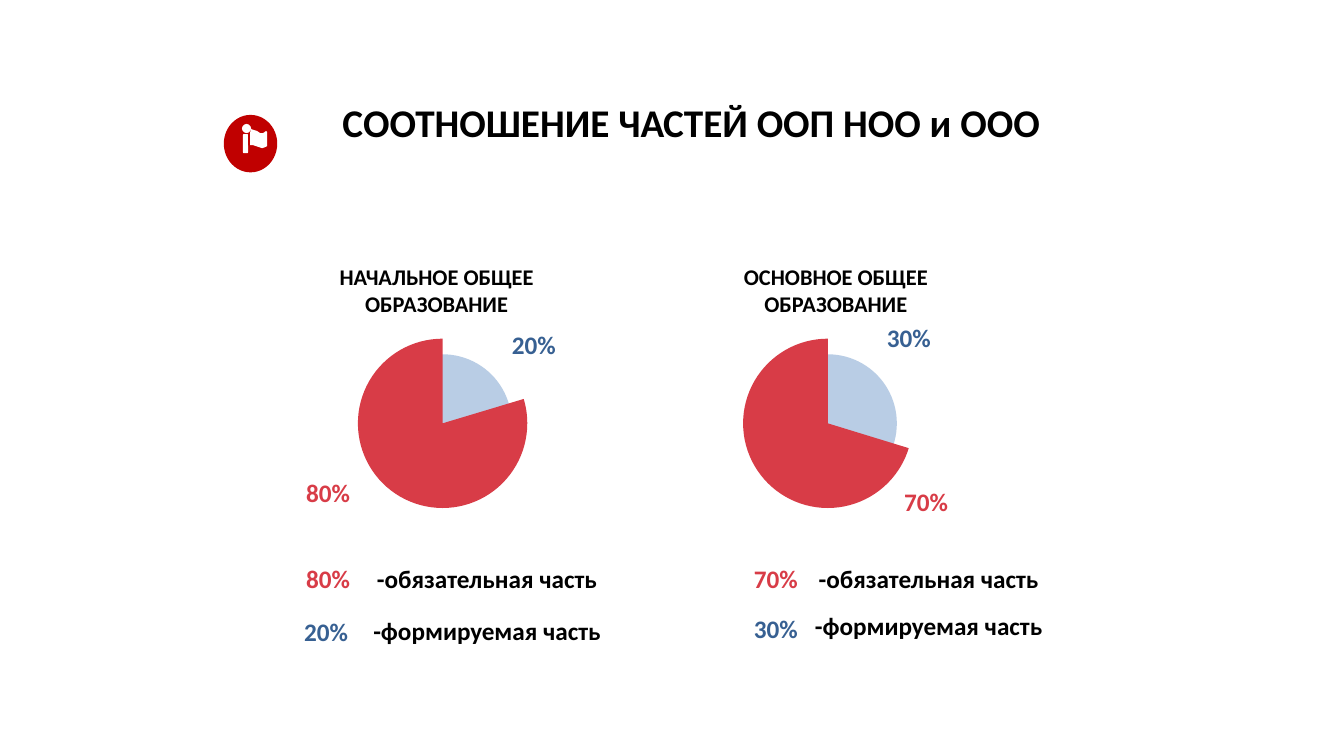
from pptx import Presentation
from pptx.dml.color import RGBColor
from pptx.enum.shapes import MSO_SHAPE as SHAPE
from pptx.enum.text import MSO_ANCHOR as ANCHOR, PP_ALIGN as ALIGN
from pptx.util import Inches, Pt

BLACK, WHITE, RED, BLUE, PALE, BADGE = "000000", "FFFFFF", "D83C47", "376092", "B9CDE5", "C00000"
TITLE = "СООТНОШЕНИЕ ЧАСТЕЙ ООП НОО и ООО"
PARTS = [("-обязательная часть", RED), ("-формируемая часть", BLUE)]
LEVELS = [
    dict(head="НАЧАЛЬНОЕ ОБЩЕЕ ОБРАЗОВАНИЕ", head_x=2.75, pie_x=3.55, start=343.27,
         shares=["80%", "20%"], labels=[(2.89, 4.68), (4.93, 3.21)],
         keys=[(2.89, 5.53), (2.87, 6.06)], part_x=3.55, part_y=[5.59, 6.1]),
    dict(head="ОСНОВНОЕ ОБЩЕЕ ОБРАЗОВАНИЕ", head_x=6.71, pie_x=7.37, start=17.06,
         shares=["70%", "30%"], labels=[(8.82, 4.77), (8.65, 3.14)],
         keys=[(7.33, 5.53), (7.33, 6.03)], part_x=7.93, part_y=[5.59, 6.06]),
]
PIE_Y, PIE_SIZE, INNER = 3.36, 1.68, 1.37
FLAG = [(2.49, 1.28), (2.52, 1.29), (2.55, 1.3), (2.58, 1.32), (2.61, 1.32), (2.64, 1.3),
        (2.65, 1.31), (2.65, 1.45), (2.63, 1.46), (2.6, 1.47), (2.57, 1.46), (2.54, 1.45),
        (2.51, 1.44), (2.48, 1.44), (2.48, 1.32)]


def paint(sp, color):
    sp.fill.solid()
    sp.fill.fore_color.rgb = RGBColor.from_string(color)
    sp.line.fill.background()
    sp.shadow.inherit = False


def add_shape(s, kind, color, *box):
    sp = s.shapes.add_shape(kind, *map(Inches, box))
    paint(sp, color)
    return sp


def add_text(s, text, box, size=18, color=BLACK, left=0.1, anchor=ANCHOR.MIDDLE):
    tf = s.shapes.add_textbox(*map(Inches, box)).text_frame
    tf.word_wrap = True
    tf.vertical_anchor = anchor
    tf.margin_left = Inches(left)
    tf.margin_right = tf.margin_top = tf.margin_bottom = Inches(0.1)
    p = tf.paragraphs[0]
    p.text, p.alignment = text, ALIGN.CENTER
    p.font.name, p.font.size, p.font.bold = "Calibri", Pt(size), True
    p.font.color.rgb = RGBColor.from_string(color)


def add_level(s, level):
    inset = (PIE_SIZE - INNER) / 2
    add_shape(s, SHAPE.OVAL, PALE, level["pie_x"] + inset, PIE_Y + inset, INNER, INNER)
    pie = add_shape(s, SHAPE.PIE, RED, level["pie_x"], PIE_Y, PIE_SIZE, PIE_SIZE)
    pie.adjustments[0], pie.adjustments[1] = level["start"] * 0.6, 270 * 0.6
    add_text(s, level["head"], (level["head_x"], 2.73, 3.26, 0.3), 16, left=0)
    rows = zip(PARTS, level["shares"], level["labels"], level["keys"], level["part_y"])
    for (part, color), share, label, key, y in rows:
        for spot in (label, key):
            add_text(s, share, (*spot, 0.73, 0.41), color=color)
        add_text(s, part, (level["part_x"], y, 2.66, 0.3), left=0)


def add_badge(s):
    add_shape(s, SHAPE.OVAL, BADGE, 2.22, 1.14, 0.53, 0.57)
    add_shape(s, SHAPE.OVAL, WHITE, 2.4, 1.23, 0.09, 0.09)
    add_shape(s, SHAPE.ROUNDED_RECTANGLE, WHITE, 2.41, 1.33, 0.05, 0.19)
    start, *rest = [(Inches(x), Inches(y)) for x, y in FLAG]
    outline = s.shapes.build_freeform(*start)
    outline.add_line_segments(rest)
    paint(outline.convert_to_shape(), WHITE)


def main():
    """Build the slide on the two shares of the school programmes."""
    prs = Presentation()
    prs.slide_width, prs.slide_height = Inches(13.33), Inches(7.5)
    s = prs.slides.add_slide(prs.slide_layouts[6])
    add_text(s, TITLE, (3.01, 0.88, 7.69, 0.27), 28, anchor=ANCHOR.TOP)
    for level in LEVELS:
        add_level(s, level)
    add_badge(s)
    prs.save("out.pptx")


if __name__ == "__main__":
    main()
